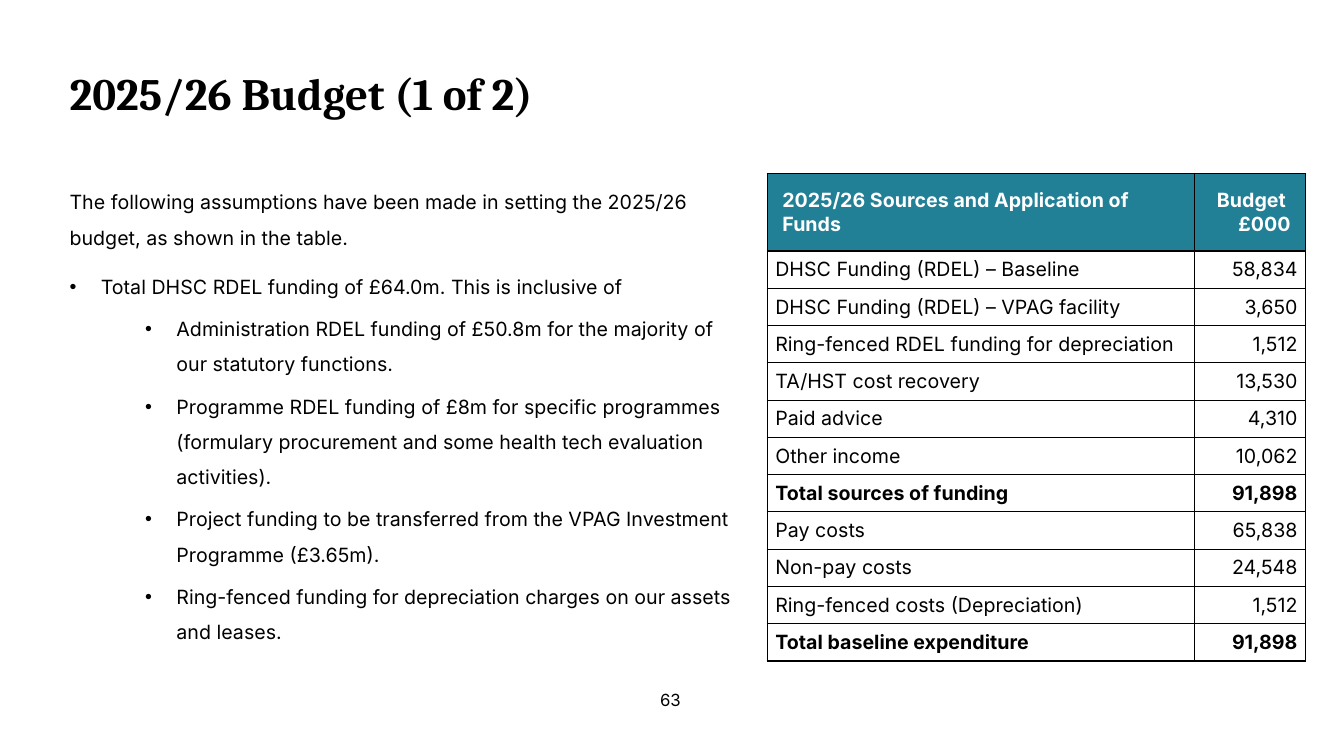
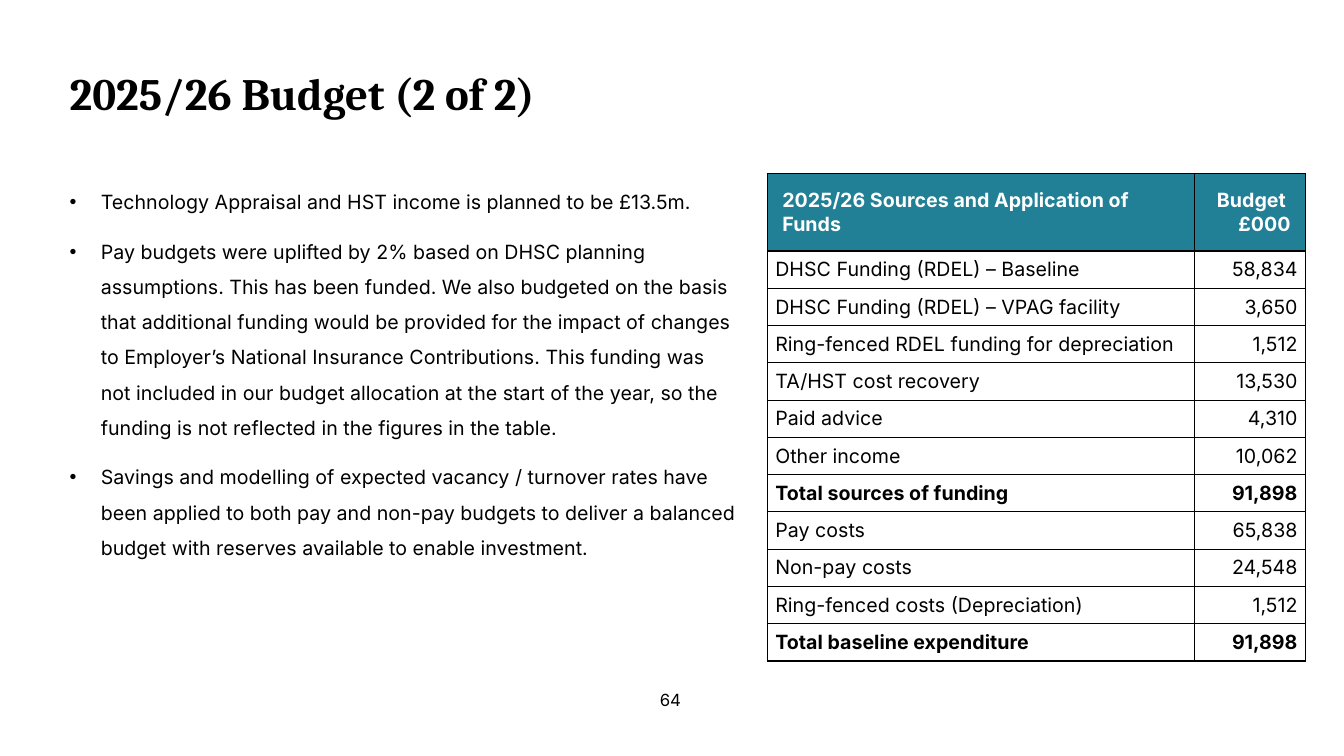
from lxml import etree
from pptx import Presentation
from pptx.dml.color import RGBColor
from pptx.enum.text import MSO_ANCHOR, MSO_AUTO_SIZE, PP_ALIGN
from pptx.oxml import parse_xml
from pptx.oxml.ns import nsdecls, qn
from pptx.util import Inches, Pt

BLACK, WHITE, TEAL = "000000", "FFFFFF", "228096"
LEFT, RIGHT, CENTER = PP_ALIGN.LEFT, PP_ALIGN.RIGHT, PP_ALIGN.CENTER


def rgb(color):
    return RGBColor.from_string(color)


def put(tf, text, size=14, font="Inter", color=BLACK, bold=False, align=LEFT,
        level=0, bullet=None, indent=0, spacing=1.0, before=0):
    """Write one paragraph; the first one fills the empty paragraph of the frame."""
    first = not tf.text
    p = tf.paragraphs[0] if first else tf.add_paragraph()
    p.level = level
    pPr = p._p.get_or_add_pPr()
    pPr.set("marL", str(Inches(indent)))
    pPr.set("indent", str(Inches(-0.31 if bullet else 0)))
    if bullet:
        etree.SubElement(pPr, qn("a:buFont")).set("typeface", "Arial")
        etree.SubElement(pPr, qn("a:buChar")).set("char", bullet)
    else:
        etree.SubElement(pPr, qn("a:buNone"))
    p.alignment = align
    p.line_spacing = spacing
    p.space_before = Pt(0 if first else before)
    r = p.add_run()
    r.text = text
    r.font.size, r.font.name, r.font.bold = Pt(size), font, bold
    r.font.color.rgb = rgb(color)


# Paragraph formats of the body text
PLAIN = dict(spacing=1.5, before=10)
BULLET = dict(PLAIN, bullet="•", indent=0.31)
SUB = dict(BULLET, level=1, indent=1.06, before=5)

# Content: page number, title, body paragraphs
pages = [
    (63, "2025/26 Budget (1 of 2)", [
        ("The following assumptions have been made in setting the 2025/26 budget, "
         "as shown in the table.", PLAIN),
        ("Total DHSC RDEL funding of £64.0m. This is inclusive of", BULLET),
        ("Administration RDEL funding of £50.8m for the majority of our statutory "
         "functions.", SUB),
        ("Programme RDEL funding of £8m for specific programmes (formulary procurement "
         "and some health tech evaluation activities).", SUB),
        ("Project funding to be transferred from the VPAG Investment Programme "
         "(£3.65m).", SUB),
        ("Ring-fenced funding for depreciation charges on our assets and leases.", SUB),
    ]),
    (64, "2025/26 Budget (2 of 2)", [
        ("Technology Appraisal and HST income is planned to be £13.5m.", BULLET),
        ("Pay budgets were uplifted by 2% based on DHSC planning assumptions. This has "
         "been funded. We also budgeted on the basis that additional funding would be "
         "provided for the impact of changes to Employer’s National Insurance "
         "Contributions. This funding was not included in our budget allocation at the "
         "start of the year, so the funding is not reflected in the figures in the "
         "table.", BULLET),
        ("Savings and modelling of expected vacancy / turnover rates have been applied "
         "to both pay and non-pay budgets to deliver a balanced budget with reserves "
         "available to enable investment.", BULLET),
    ]),
]

# Content: budget table, the same on each page
budget = [
    ("2025/26 Sources and Application of Funds", "Budget \n£000"),
    ("DHSC Funding (RDEL) – Baseline", "58,834"),
    ("DHSC Funding (RDEL) – VPAG facility", "3,650"),
    ("Ring-fenced RDEL funding for depreciation", "1,512"),
    ("TA/HST cost recovery", "13,530"),
    ("Paid advice", "4,310"),
    ("Other income", "10,062"),
    ("Total sources of funding", "91,898"),
    ("Pay costs", "65,838"),
    ("Non-pay costs", "24,548"),
    ("Ring-fenced costs (Depreciation)", "1,512"),
    ("Total baseline expenditure", "91,898"),
]

prs = Presentation()
prs.slide_width, prs.slide_height = Inches(13.33), Inches(7.5)

for number, title, body in pages:
    s = prs.slides.add_slide(prs.slide_layouts[1])

    # Title, body and page number frames
    page_box = s.shapes.add_textbox(0, 0, 0, 0)
    for sp, box, anchor in (
        (s.shapes.title, (0.59, 0.6, 12.11, 1.27), MSO_ANCHOR.TOP),
        (s.placeholders[1], (0.59, 1.72, 6.83, 4.46), MSO_ANCHOR.TOP),
        (page_box, (5.15, 6.74, 3, 0.4), MSO_ANCHOR.MIDDLE),
    ):
        sp.left, sp.top, sp.width, sp.height = map(Inches, box)
        tf = sp.text_frame
        tf.word_wrap, tf.auto_size = True, MSO_AUTO_SIZE.NONE
        tf.vertical_anchor = anchor

    put(s.shapes.title.text_frame, title, size=32, font="Cambria", bold=True)
    for text, fmt in body:
        put(s.placeholders[1].text_frame, text, **fmt)
    put(page_box.text_frame, str(number), size=12, align=CENTER)

    # Budget table
    table = s.shapes.add_table(len(budget), 2, Inches(7.61), Inches(1.72),
                               Inches(5.34), Inches(4.86)).table
    table.horz_banding = False
    table.columns[0].width, table.columns[1].width = Inches(4.24), Inches(1.1)
    for i, row in enumerate(budget):
        header = i == 0
        table.rows[i].height = Inches(0.77 if header else 0.37)
        for j, text in enumerate(row):
            cell = table.cell(i, j)
            cell.vertical_anchor = MSO_ANCHOR.MIDDLE
            cell.margin_left = cell.margin_right = Inches(0.15 if header else 0.08)
            cell.margin_top = cell.margin_bottom = Inches(0.15 if header else 0)
            for line in text.split("\n"):
                put(cell.text_frame, line, color=WHITE if header else BLACK,
                    bold=header or row[0].startswith("Total"),
                    align=RIGHT if j else LEFT)
            # Borders come before the fill in the cell properties
            tcPr = cell._tc.get_or_add_tcPr()
            for side in ("lnL", "lnR", "lnT", "lnB"):
                tcPr.append(parse_xml(
                    f'<a:{side} {nsdecls("a")} w="{Pt(1)}"><a:solidFill>'
                    f'<a:srgbClr val="{BLACK}"/></a:solidFill></a:{side}>'))
            cell.fill.solid()
            cell.fill.fore_color.rgb = rgb(TEAL if header else WHITE)

prs.save("out.pptx")
